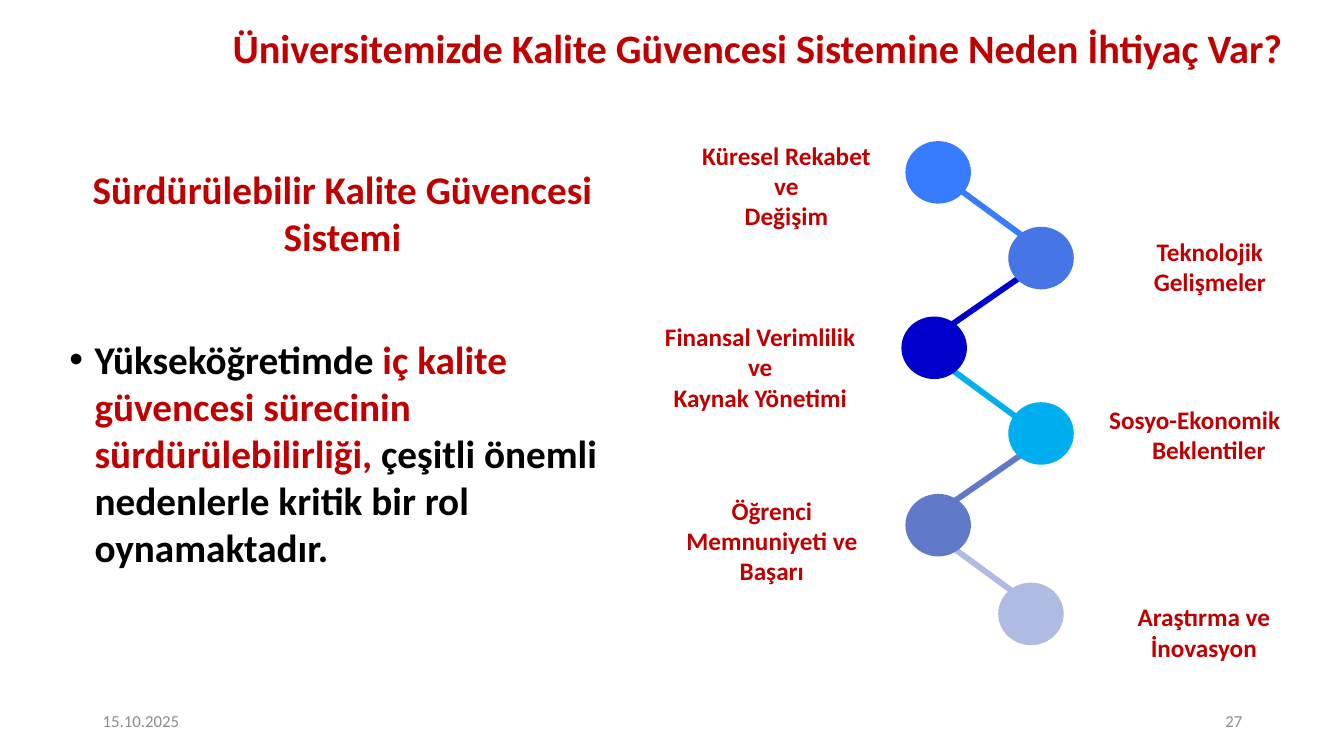
import pptx
import pptx.util
import pptx.dml.color
import pptx.enum.shapes
import pptx.enum.text
import pptx.oxml.ns
from lxml import etree

Inches = pptx.util.Inches
Pt = pptx.util.Pt
ALIGN = pptx.enum.text.PP_ALIGN
ANCHOR = pptx.enum.text.MSO_ANCHOR

# Content: each paragraph is a list of (text, colour name) runs
TITLE = "Üniversitemizde Kalite Güvencesi Sistemine Neden İhtiyaç Var?"
HEADING = [("Sürdürülebilir Kalite Güvencesi Sistemi", "red")]
BULLET = [
    ("Yükseköğretimde ", "black"),
    ("iç kalite güvencesi sürecinin sürdürülebilirliği, ", "red"),
    ("çeşitli önemli nedenlerle kritik bir rol oynamaktadır.", "black"),
]
DATE, PAGE = "15.10.2025", "27"

# Reasons: paragraphs, label box, hanging indent, circle left and top, circle colour
REASONS = [
    (["Küresel Rekabet ve", "Değişim"], (6.9, 1.38, 1.8, 0.95), 0, (8.98, 1.4), "377CFF"),
    (["Teknolojik Gelişmeler"], (11.1, 2.33, 1.8, 0.64), 0, (10, 2.25), "4676E6"),
    (["Finansal Verimlilik ve", "Kaynak Yönetimi"], (6.54, 3.18, 2, 0.95), 0, (8.94, 3.14), "0000CC"),
    (["Sosyo-Ekonomik Beklentiler"], (10.75, 4, 2.2, 0.62), 0.28, (10, 3.99), "00AFEF"),
    (["Öğrenci Memnuniyeti ve Başarı"], (6.61, 4.9, 2.09, 0.95), 0, (8.98, 4.9), "6179C9"),
    (["Araştırma ve İnovasyon"], (10.94, 5.96, 2, 0.64), 0, (9.9, 5.78), "B0BBE4"),
]
# Links: left end and colour; they fall and rise in turn
LINKS = [
    ((9.27, 1.7), "377CFF"),
    ((9.31, 3.31), "0000CC"),
    ((9.17, 3.47), "00AFEF"),
    ((9.31, 5.08), "6179C9"),
    ((9.16, 5.22), "B0BBE4"),
]
LINK_WIDTH, LINK_FALL, LINK_RISE = 1.24, 0.91, -0.86
CIRCLE_SIZE = (0.65, 0.62)

THEME = {
    "font": "Calibri",
    "colours": {"red": "C00000", "black": "000000", "grey": "8C8C8C"},
    "title": 28.8, "body": 28, "label": 18, "footer": 12, "link": 4.2,
}


def rgb(value):
    return pptx.dml.color.RGBColor.from_string(value)


def add_text(slide, box, paragraphs, *, size, bold=True, align=ALIGN.CENTER,
             anchor=ANCHOR.TOP, insets=(0.1, 0.05, 0.1, 0.05), gap=0,
             line_spacing=None, hanging=0, bullet_from=None):
    frame = slide.shapes.add_textbox(*map(Inches, box)).text_frame
    frame.word_wrap = True
    frame.vertical_anchor = anchor
    (frame.margin_left, frame.margin_top,
     frame.margin_right, frame.margin_bottom) = map(Inches, insets)
    for index, runs in enumerate(paragraphs):
        paragraph = frame.paragraphs[0] if index == 0 else frame.add_paragraph()
        paragraph.alignment = align
        if line_spacing:
            paragraph.line_spacing = line_spacing
        if index:
            paragraph.space_before = Pt(gap)
        bulleted = bullet_from is not None and index >= bullet_from
        indent = 0.25 if bulleted else hanging
        if indent:
            properties = paragraph._p.get_or_add_pPr()
            properties.set("marL", str(Inches(indent)))
            properties.set("indent", str(-Inches(indent)))
            if bulleted:
                paragraph.alignment = ALIGN.LEFT
                font = etree.SubElement(properties, pptx.oxml.ns.qn("a:buFont"))
                font.set("typeface", "Arial")
                mark = etree.SubElement(properties, pptx.oxml.ns.qn("a:buChar"))
                mark.set("char", "•")
        for text, colour in runs:
            run = paragraph.add_run()
            run.text = text
            run.font.name = THEME["font"]
            run.font.size = Pt(size)
            run.font.bold = bold
            run.font.color.rgb = rgb(THEME["colours"][colour])


def add_link(slide, start, fall, colour):
    left, top = start
    link = slide.shapes.add_connector(
        pptx.enum.shapes.MSO_CONNECTOR.STRAIGHT,
        *map(Inches, (left, top, left + LINK_WIDTH, top + fall)))
    link.line.color.rgb = rgb(colour)
    link.line.width = Pt(THEME["link"])
    etree.SubElement(link._element.spPr, pptx.oxml.ns.qn("a:effectLst"))


def add_circle(slide, position, colour):
    circle = slide.shapes.add_shape(
        pptx.enum.shapes.MSO_SHAPE.OVAL, *map(Inches, position + CIRCLE_SIZE))
    circle.shadow.inherit = False
    circle.fill.solid()
    circle.fill.fore_color.rgb = rgb(colour)
    circle.line.fill.background()


def main():
    presentation = pptx.Presentation()
    presentation.slide_width = Inches(13.33)
    presentation.slide_height = Inches(7.5)
    slide = presentation.slides.add_slide(presentation.slide_layouts[6])

    # Title and body
    add_text(slide, (1.74, 0.23, 11.55, 0.55), [[(TITLE, "red")]],
             size=THEME["title"], anchor=ANCHOR.MIDDLE, line_spacing=0.9)
    add_text(slide, (0.59, 1.59, 5.61, 5.17), [HEADING, BULLET],
             size=THEME["body"], gap=54, bullet_from=1)

    # Footer
    for left, text, align in ((0.92, DATE, ALIGN.LEFT), (9.42, PAGE, ALIGN.RIGHT)):
        add_text(slide, (left, 6.95, 3, 0.4), [[(text, "grey")]], size=THEME["footer"],
                 bold=False, align=align, anchor=ANCHOR.MIDDLE)

    # Zigzag of links, with circles and labels over it
    for index, (start, colour) in enumerate(LINKS):
        add_link(slide, start, LINK_RISE if index % 2 else LINK_FALL, colour)
    for lines, box, hanging, position, colour in REASONS:
        add_circle(slide, position, colour)
        add_text(slide, box, [[(line, "red")] for line in lines],
                 size=THEME["label"], insets=(0, 0.01, 0, 0), hanging=hanging)

    presentation.save("out.pptx")


if __name__ == "__main__":
    main()
